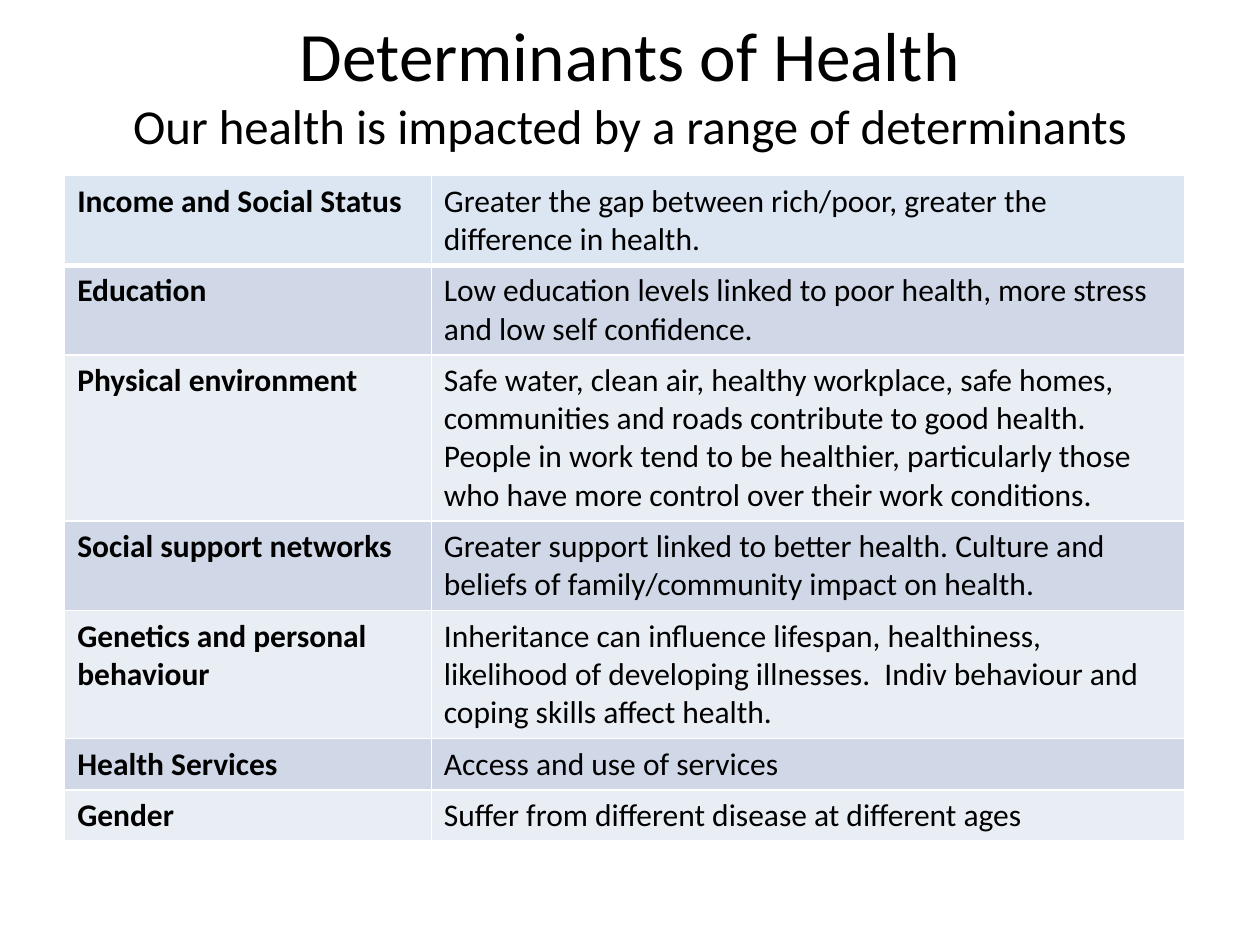
from dataclasses import dataclass

from lxml.etree import SubElement
from pptx import Presentation
from pptx.dml.color import RGBColor
from pptx.enum.text import MSO_ANCHOR, MSO_AUTO_SIZE, PP_ALIGN
from pptx.oxml.ns import qn
from pptx.slide import Slide
from pptx.table import _Cell
from pptx.text.text import _Paragraph
from pptx.util import Pt


@dataclass(frozen=True)
class Theme:
    font: str = "Calibri"
    text: str = "000000"
    border: str = "FFFFFF"
    first_row: str = "DCE6F2"
    bands: tuple[str, str] = ("D0D8E8", "E9EDF4")
    title_size: float = 39.6
    subtitle_size: float = 27.9
    body_size: float = 18
    thin_line: float = 1
    thick_line: float = 3


@dataclass(frozen=True)
class Determinant:
    name: str
    effect: str


THEME = Theme()
COLUMN_WIDTHS = (209.5, 430.5)
FIRST_ROW_HEIGHT = 33.8
ROW_HEIGHT = 29.2
DETERMINANTS = (
    Determinant(
        "Income and Social Status",
        "Greater the gap between rich/poor, greater the difference in health.",
    ),
    Determinant(
        "Education",
        "Low education levels linked to poor health, more stress and low self confidence.",
    ),
    Determinant(
        "Physical environment",
        "Safe water, clean air, healthy workplace, safe homes, communities and roads "
        "contribute to good health.  People in work tend to be healthier, particularly "
        "those who have more control over their work conditions.",
    ),
    Determinant(
        "Social support networks",
        "Greater support linked to better health. Culture and beliefs of "
        "family/community impact on health.",
    ),
    Determinant(
        "Genetics and personal behaviour",
        "Inheritance can influence lifespan, healthiness, likelihood of developing "
        "illnesses.  Indiv behaviour and coping skills affect health.",
    ),
    Determinant("Health Services", "Access and use of services"),
    Determinant("Gender", "Suffer from different disease at different ages"),
)


def write_text(
    paragraph: _Paragraph,
    text: str,
    *,
    size: float,
    bold: bool = False,
    align: PP_ALIGN = PP_ALIGN.LEFT,
) -> None:
    paragraph.alignment = align
    run = paragraph.add_run()
    run.text = text
    run.font.name = THEME.font
    run.font.size = Pt(size)
    run.font.bold = bold
    run.font.color.rgb = RGBColor.from_string(THEME.text)


def set_borders(cell: _Cell, *, top: float, bottom: float) -> None:
    properties = cell._tc.get_or_add_tcPr()
    widths = {"L": THEME.thin_line, "R": THEME.thin_line, "T": top, "B": bottom}
    for side, width in widths.items():
        line = SubElement(properties, qn(f"a:ln{side}"), w=str(Pt(width)))
        fill = SubElement(line, qn("a:solidFill"))
        SubElement(fill, qn("a:srgbClr"), val=THEME.border)


def add_title(slide: Slide) -> None:
    title = slide.shapes.title
    title.left, title.top, title.width, title.height = Pt(36), Pt(21.6), Pt(648), Pt(90)
    frame = title.text_frame
    frame.word_wrap = True
    frame.auto_size = MSO_AUTO_SIZE.NONE
    frame.vertical_anchor = MSO_ANCHOR.MIDDLE
    frame.margin_bottom = Pt(42)
    write_text(
        frame.paragraphs[0],
        "Determinants of Health",
        size=THEME.title_size,
        align=PP_ALIGN.CENTER,
    )
    write_text(
        frame.add_paragraph(),
        "Our health is impacted by a range of determinants",
        size=THEME.subtitle_size,
        align=PP_ALIGN.CENTER,
    )


def add_determinants(slide: Slide) -> None:
    table = slide.shapes.add_table(
        len(DETERMINANTS),
        len(COLUMN_WIDTHS),
        Pt(37),
        Pt(100.4),
        Pt(sum(COLUMN_WIDTHS)),
        Pt(375),
    ).table
    table.first_row = False
    table.horz_banding = False
    for column, width in zip(table.columns, COLUMN_WIDTHS):
        column.width = Pt(width)
    for index, determinant in enumerate(DETERMINANTS):
        is_first = index == 0
        table.rows[index].height = Pt(FIRST_ROW_HEIGHT if is_first else ROW_HEIGHT)
        color = THEME.first_row if is_first else THEME.bands[(index - 1) % 2]
        top = THEME.thick_line if index == 1 else THEME.thin_line
        bottom = THEME.thick_line if is_first else THEME.thin_line
        for column, text in enumerate((determinant.name, determinant.effect)):
            cell = table.cell(index, column)
            set_borders(cell, top=top, bottom=bottom)
            cell.fill.solid()
            cell.fill.fore_color.rgb = RGBColor.from_string(color)
            write_text(
                cell.text_frame.paragraphs[0],
                text,
                size=THEME.body_size,
                bold=column == 0,
            )


def main() -> None:
    presentation = Presentation()
    presentation.slide_width = Pt(720)
    presentation.slide_height = Pt(540)
    slide = presentation.slides.add_slide(presentation.slide_layouts.get_by_name("Title Only"))
    add_title(slide)
    add_determinants(slide)
    presentation.save("out.pptx")


if __name__ == "__main__":
    main()
